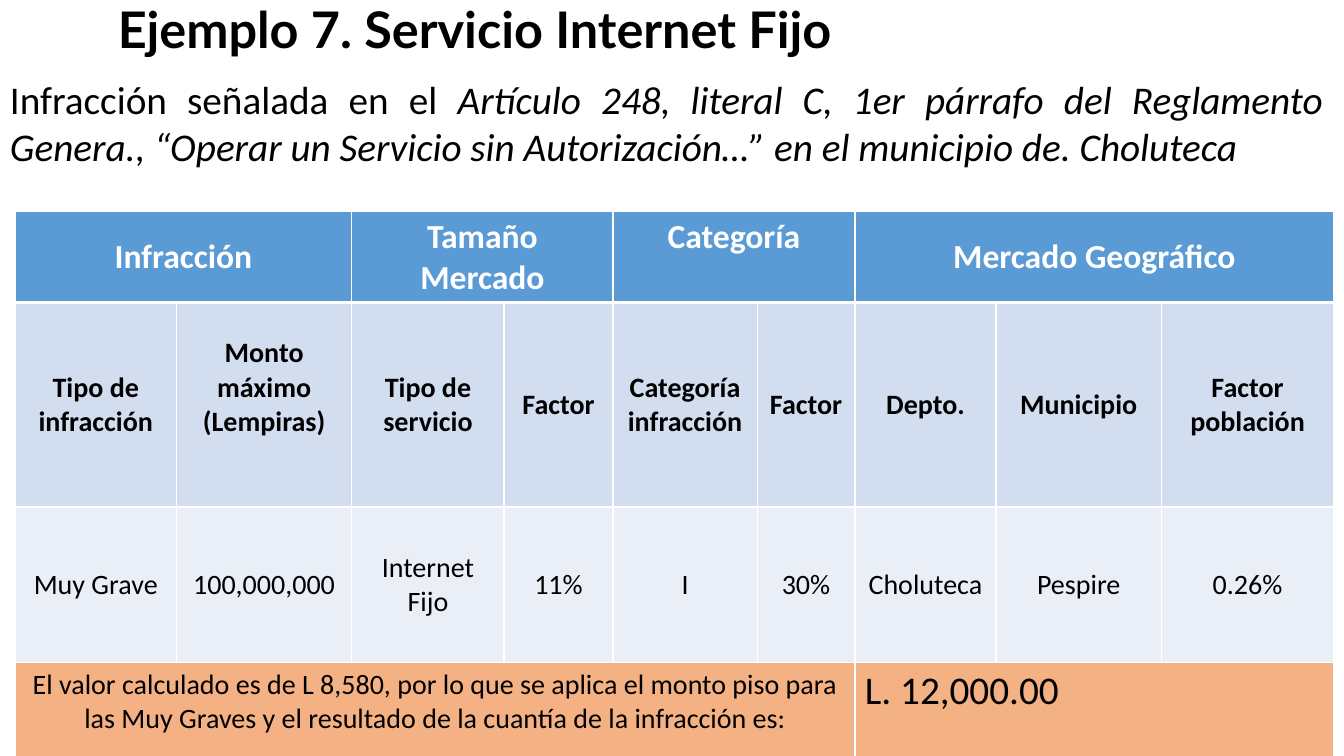
from lxml.etree import SubElement
from pptx import Presentation
from pptx.dml.color import RGBColor
from pptx.enum.text import MSO_ANCHOR as Anchor, PP_ALIGN as Align
from pptx.oxml.ns import qn
from pptx.util import Inches, Pt

COLORS = {
    "black": "000000",
    "white": "FFFFFF",
    "header": "5B9BD5",
    "subheader": "D2DEEF",
    "data": "EAEFF7",
    "result": "F4B183",
}
COLUMN_WIDTHS = [1.6, 1.74, 1.51, 1.08, 1.43, 0.97, 1.4, 1.64, 1.71]
ROW_HEIGHTS = [0.87, 2.03, 1.54, 0.96]


class PageBuilder:
    def __init__(self, page, font="Calibri"):
        self.page = page
        self.font = font

    def style(self, span, size, color="black", bold=False, italic=False, font=None):
        span.font.name = font or self.font
        span.font.size = Pt(size)
        span.font.bold = bold
        span.font.italic = italic
        span.font.color.rgb = RGBColor.from_string(COLORS[color])

    def text(self, left, top, width, height, pieces, size,
             align=Align.LEFT, line_spacing=None, **look):
        """Place one paragraph made of (text, italic) pieces."""
        box = self.page.shapes.add_textbox(
            Inches(left), Inches(top), Inches(width), Inches(height))
        box.text_frame.word_wrap = True
        para = box.text_frame.paragraphs[0]
        para.alignment = align
        para.line_spacing = line_spacing
        for words, italic in pieces:
            span = para.add_run()
            span.text = words
            self.style(span, size, italic=italic, **look)

    def table(self, left, top, widths, heights):
        frame = self.page.shapes.add_table(
            len(heights), len(widths), Inches(left), Inches(top),
            Inches(sum(widths)), Inches(sum(heights)))
        table = frame.table
        for column, width in zip(table.columns, widths):
            column.width = Inches(width)
        for row, height in zip(table.rows, heights):
            row.height = Inches(height)
        return table

    def borders(self, cell, bottom=1):
        properties = cell._tc.get_or_add_tcPr()
        for side, points in (("L", 1), ("R", 1), ("T", 1), ("B", bottom)):
            line = SubElement(properties, qn(f"a:ln{side}"), w=str(Pt(points)))
            fill = SubElement(line, qn("a:solidFill"))
            SubElement(fill, qn("a:srgbClr"), val=COLORS["white"])

    def cell(self, cell, words, fill, size=20, align=Align.CENTER,
             anchor=Anchor.MIDDLE, bottom=1, **look):
        self.borders(cell, bottom)
        cell.fill.solid()
        cell.fill.fore_color.rgb = RGBColor.from_string(COLORS[fill])
        cell.vertical_anchor = anchor
        cell.text_frame.text = words
        for para in cell.text_frame.paragraphs:
            para.alignment = align
            for span in para.runs:
                self.style(span, size, **look)

    def merged_row(self, table, row, groups, **look):
        """Fill a row with (text, column count, own look) groups."""
        start = 0
        for words, count, own in groups:
            first = table.cell(row, start)
            first.merge(table.cell(row, start + count - 1))
            self.cell(first, words, **{**look, **own})
            start += count


def main():
    deck = Presentation()
    deck.slide_width, deck.slide_height = Inches(13.33), Inches(7.5)
    builder = PageBuilder(deck.slides.add_slide(deck.slide_layouts[6]))

    # Title and description of the infraction
    builder.text(1.07, 0, 11.5, 0.91, [("Ejemplo 7. Servicio Internet Fijo", False)],
                 36, line_spacing=0.9, bold=True, font="Lato")
    builder.text(0, 0.7, 13.22, 1.99, [
        ("Infracción señalada en el ", False),
        ("Artículo 248, literal C, 1er párrafo del Reglamento Genera., “Operar un "
         "Servicio sin Autorización…” en el municipio de. Choluteca", True),
    ], 28, align=Align.JUSTIFY)

    # Table headings
    table = builder.table(0.15, 2.1, COLUMN_WIDTHS, ROW_HEIGHTS)
    builder.merged_row(table, 0, [
        ("Infracción", 2, {}),
        ("Tamaño Mercado", 2, {}),
        ("Categoría", 2, {"anchor": Anchor.TOP}),
        ("Mercado Geográfico", 3, {}),
    ], fill="header", size=24, color="white", bold=True, bottom=3)

    # Column names and values
    columns = [
        ("Tipo de infracción", "Muy Grave"),
        ("Monto máximo\n(Lempiras)", "100,000,000"),
        ("Tipo de servicio", "Internet Fijo"),
        ("Factor", "11%"),
        ("Categoría infracción", "I"),
        ("Factor", "30%"),
        ("Depto.", "Choluteca"),
        ("Municipio", "Pespire"),
        ("Factor\npoblación", "0.26%"),
    ]
    for index, (name, value) in enumerate(columns):
        builder.cell(table.cell(1, index), name, "subheader", bold=True)
        builder.cell(table.cell(2, index), value, "data")
    table.cell(1, 1).margin_bottom = Inches(0.39)

    # Resulting amount
    builder.merged_row(table, 3, [
        ("El valor calculado es de L 8,580, por lo que se aplica el monto piso para "
         "las Muy Graves y el resultado de la cuantía de la infracción es:", 6, {}),
        ("L. 12,000.00", 3, {"size": 28, "align": Align.LEFT}),
    ], fill="result", anchor=Anchor.TOP)

    deck.save("out.pptx")


if __name__ == "__main__":
    main()
